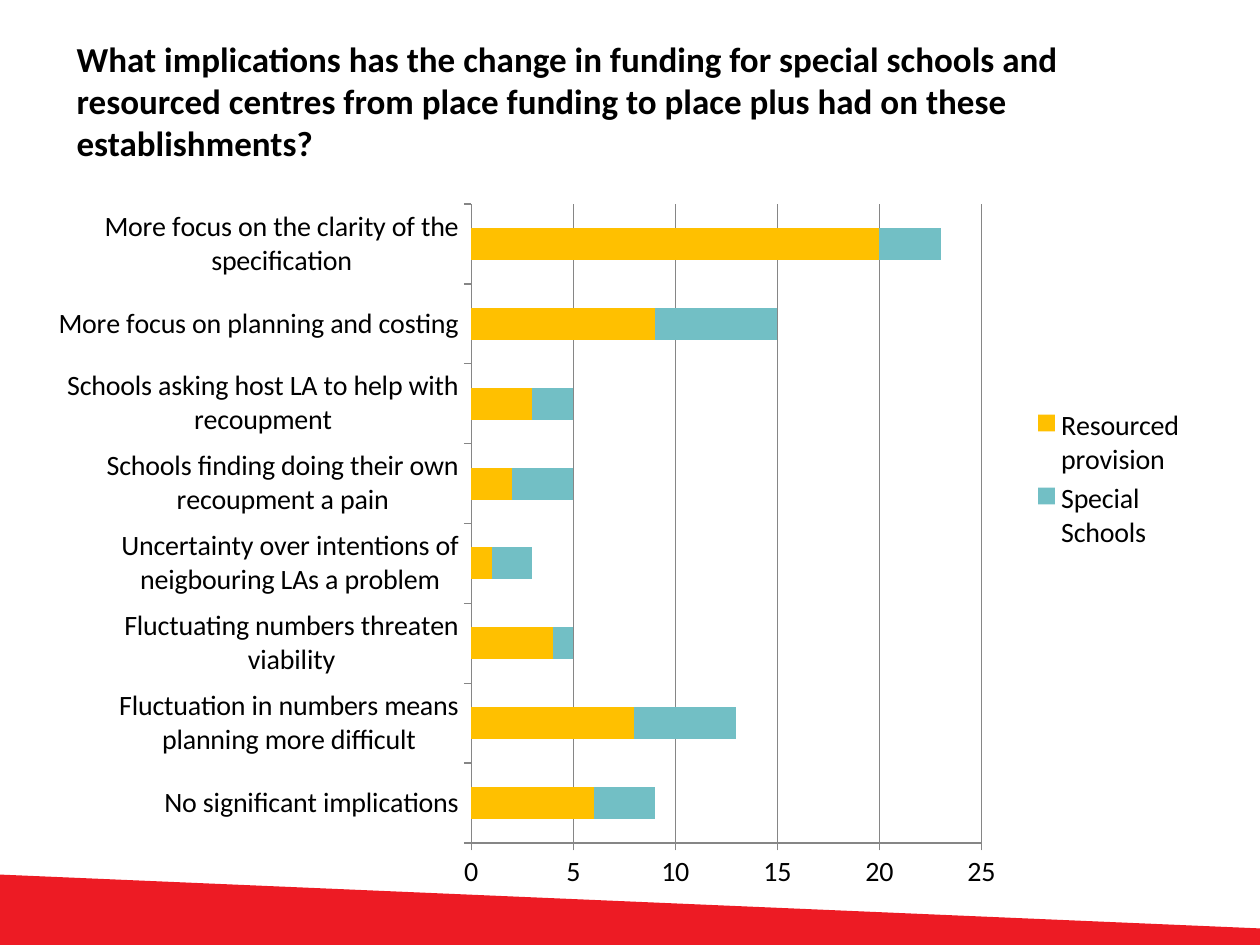
from lxml import etree
from pptx import Presentation
from pptx.chart.data import CategoryChartData
from pptx.dml.color import RGBColor
from pptx.enum.chart import XL_CHART_TYPE, XL_LEGEND_POSITION, XL_TICK_MARK
from pptx.enum.text import MSO_ANCHOR
from pptx.oxml.ns import qn
from pptx.util import Inches, Pt

FONT = "Calibri"
COLORS = {
    "band": "ED1B24",
    "text": "000000",
    "axis": "868686",
    "Resourced provision": "FFC000",
    "Special Schools": "72BFC5",
}
QUESTION = (
    "What implications has the change in funding for special schools and "
    "resourced centres from place funding to place plus had on these establishments?"
)
IMPLICATIONS = [
    ("No significant implications", 6, 3),
    ("Fluctuation in numbers means planning more difficult", 8, 5),
    ("Fluctuating numbers threaten viability", 4, 1),
    ("Uncertainty over intentions of neigbouring LAs a problem", 1, 2),
    ("Schools finding doing their own recoupment a pain", 2, 3),
    ("Schools asking host LA to help with recoupment", 3, 2),
    ("More focus on planning and costing", 9, 6),
    ("More focus on the clarity of the specification", 20, 3),
]


def color(name):
    return RGBColor.from_string(COLORS[name])


def style_font(font, size, bold=False):
    font.name = FONT
    font.size = Pt(size)
    font.bold = bold
    font.color.rgb = color("text")


def add_band(slide, left, top, width, height):
    right = left + width
    outline = slide.shapes.build_freeform(Inches(left), Inches(top))
    corners = [
        (left, top + height - 0.02),
        (right, top + height),
        (right, top + height - 0.16),
    ]
    outline.add_line_segments([(Inches(x), Inches(y)) for x, y in corners])
    band = outline.convert_to_shape()
    band.shadow.inherit = False
    band.fill.solid()
    band.fill.fore_color.rgb = color("band")
    band.line.fill.background()


def add_question(slide, left, top, width, height):
    question = slide.shapes.add_textbox(*map(Inches, (left, top, width, height)))
    frame = question.text_frame
    frame.word_wrap = True
    frame.vertical_anchor = MSO_ANCHOR.MIDDLE
    frame.text = QUESTION
    style_font(frame.paragraphs[0].runs[0].font, 20, bold=True)


def set_layout(part, position, modes, box, chart_size):
    layout = part.find(qn("c:layout"))
    if layout is None:
        layout = etree.Element(qn("c:layout"))
        part.insert(position, layout)
    manual = etree.SubElement(layout, qn("c:manualLayout"))
    chart_width, chart_height = chart_size
    extents = (chart_width, chart_height, chart_width, chart_height)
    fractions = [length / extent for length, extent in zip(box, extents)]
    settings = {**modes, "xMode": "edge", "yMode": "edge", **dict(zip("xywh", fractions))}
    for tag, value in settings.items():
        etree.SubElement(manual, qn(f"c:{tag}")).set("val", str(value))


def add_implications_chart(slide, left, top, width, height):
    categories, resourced, special = zip(*IMPLICATIONS)
    answers = CategoryChartData()
    answers.categories = categories
    answers.add_series("Resourced provision", resourced)
    answers.add_series("Special Schools", special)
    chart = slide.shapes.add_chart(
        XL_CHART_TYPE.BAR_STACKED, *map(Inches, (left, top, width, height)), answers
    ).chart
    style_font(chart.font, 16)
    chart.has_title = False
    chart.has_legend = True
    chart.legend.position = XL_LEGEND_POSITION.RIGHT
    chart.legend.include_in_layout = False

    bars = chart.plots[0]
    bars.gap_width = 150
    bars.overlap = 100
    bars.vary_by_categories = False
    for series in bars.series:
        series.format.fill.solid()
        series.format.fill.fore_color.rgb = color(series.name)

    for axis in (chart.category_axis, chart.value_axis):
        axis.major_tick_mark = XL_TICK_MARK.OUTSIDE
        axis.format.line.color.rgb = color("axis")
    chart.category_axis.has_major_gridlines = False
    count_axis = chart.value_axis
    count_axis.minimum_scale = 0
    count_axis.maximum_scale = 25
    count_axis.major_unit = 5
    count_axis.has_major_gridlines = True
    count_axis.major_gridlines.format.line.color.rgb = color("axis")

    chart_size = (width, height)
    plot_area = bars._element.getparent()
    set_layout(plot_area, 0, {"layoutTarget": "inner"}, (3.31, 0.07, 4.05, 5.08), chart_size)
    set_layout(chart.legend._element, 1, {}, (7.72, 1.66, 1.3, 1.2), chart_size)


def main():
    deck = Presentation()
    deck.slide_width = Inches(10)
    deck.slide_height = Inches(7.5)
    slide = deck.slides.add_slide(deck.slide_layouts[6])
    add_band(slide, -0.02, 6.94, 10.06, 0.59)
    add_question(slide, 0.51, 0.21, 8.74, 1.18)
    add_implications_chart(slide, 0.43, 1.55, 9.13, 5.51)
    deck.save("out.pptx")


if __name__ == "__main__":
    main()
